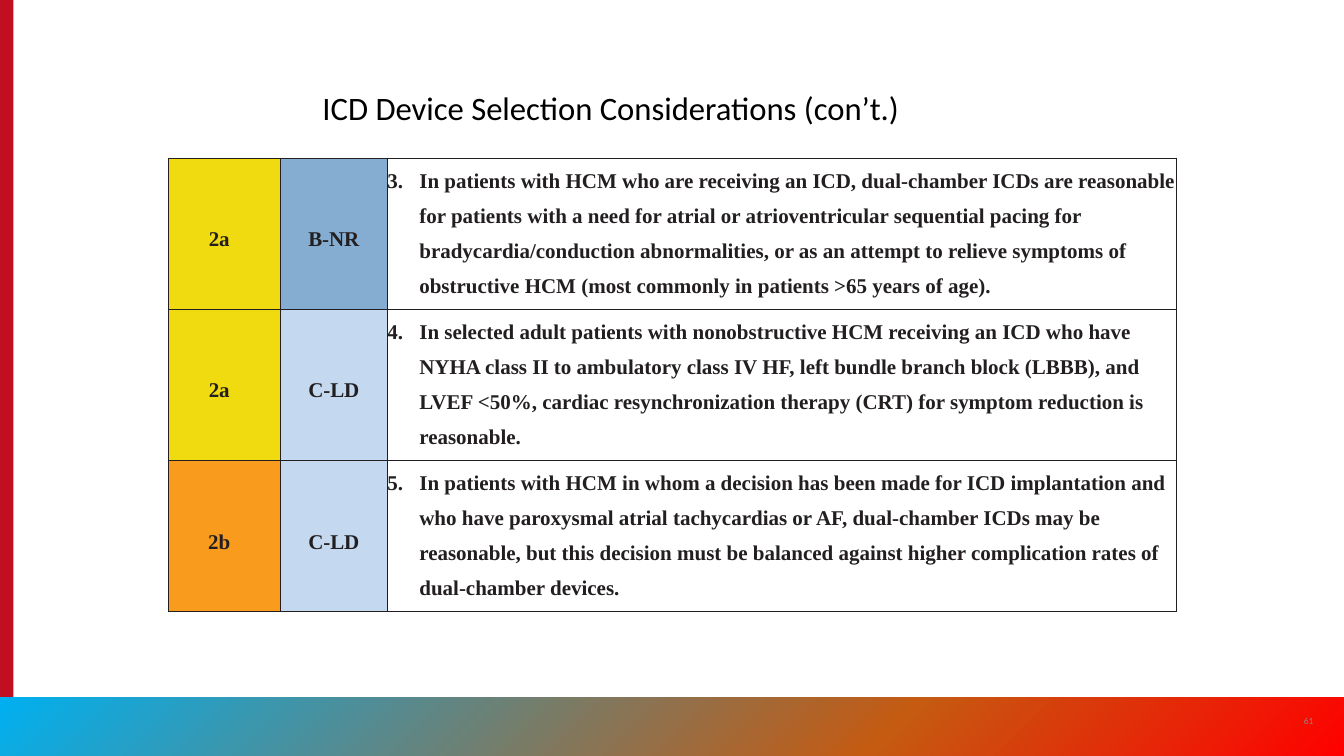
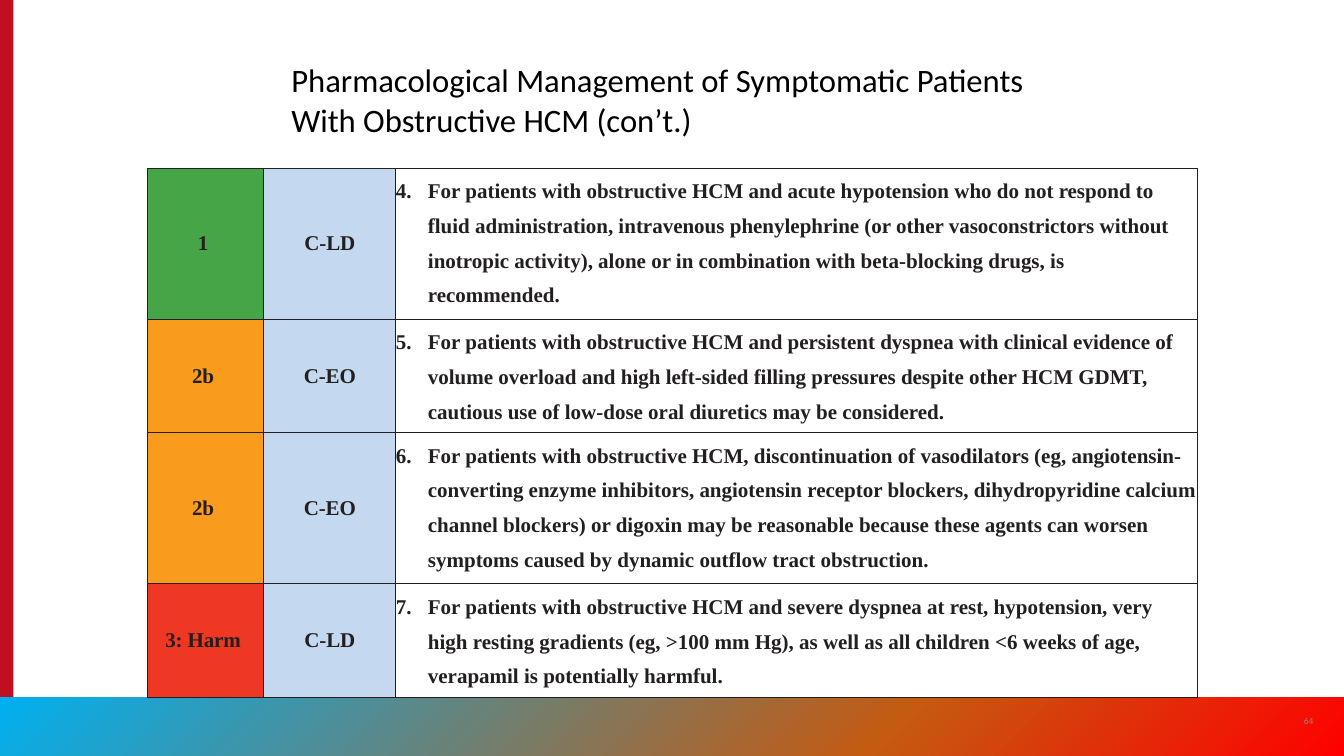
from dataclasses import dataclass

from lxml import etree
from pptx import Presentation, util as u
from pptx.dml import color
from pptx.enum import shapes, text
from pptx.oxml import ns

COLORS = {
    "bar": "C10E21",
    "band_start": "00B0F0",
    "band_middle": "C55A11",
    "band_end": "FF0000",
    "number": "8A8B8A",
    "title": "000000",
    "ink": "231F20",
    "1": "45A547",
    "2a": "F0DA10",
    "2b": "F99B1C",
    "3: Harm": "EF3824",
    "B-NR": "85ADD1",
    "C-LD": "C4D9F0",
    "C-EO": "C4D9F0",
}
BAND_STOPS = [(0, "band_start"), (66, "band_middle"), (100, "band_end")]
SLIDE_WIDTH, SLIDE_HEIGHT = u.Cm(40.64), u.Cm(22.86)
BAND_TOP = u.Cm(21.08)
HANGING = u.Cm(0.97)
TITLE_FONT, TABLE_FONT = "Calibri", "Times New Roman"


@dataclass
class Recommendation:
    strength: str
    evidence: str
    wording: str
    height: float


@dataclass
class Page:
    number: str
    title: str
    title_box: tuple[float, float, float, float]
    table_corner: tuple[float, float]
    columns: tuple[float, float, float]
    label_spacing: float
    strength_margins: tuple[float, float]
    first_item: int
    rows: list[Recommendation]


FOUR_LINES, THREE_LINES = 4.57, 3.43

PAGES = [
    Page(
        "61", "ICD Device Selection Considerations (con’t.)",
        (9.5, 2.54, 21.64, 1.45), (5.08, 4.78), (3.4, 3.23, 23.85),
        1.5, (0.18, 0.48), 3,
        [
            Recommendation(
                "2a", "B-NR",
                "In patients with HCM who are receiving an ICD, dual-chamber ICDs are reasonable "
                "for patients with a need for atrial or atrioventricular sequential pacing for "
                "bradycardia/conduction abnormalities, or as an attempt to relieve symptoms of "
                "obstructive HCM (most commonly in patients >65 years of age).", FOUR_LINES),
            Recommendation(
                "2a", "C-LD",
                "In selected adult patients with nonobstructive HCM receiving an ICD who have "
                "NYHA class II to ambulatory class IV HF, left bundle branch block (LBBB), and "
                "LVEF <50%, cardiac resynchronization therapy (CRT) for symptom reduction is "
                "reasonable.", FOUR_LINES),
            Recommendation(
                "2b", "C-LD",
                "In patients with HCM in whom a decision has been made for ICD implantation and "
                "who have paroxysmal atrial tachycardias or AF, dual-chamber ICDs may be "
                "reasonable, but this decision must be balanced against higher complication "
                "rates of dual-chamber devices.", FOUR_LINES),
        ],
    ),
    Page(
        "64", "Pharmacological Management of Symptomatic Patients With Obstructive HCM (con’t.)",
        (8.56, 1.7, 23.5, 2.64), (4.45, 5.08), (3.53, 3.99, 24.23),
        1.0, (0, 0.15), 4,
        [
            Recommendation(
                "1", "C-LD",
                "For patients with obstructive HCM and acute hypotension who do not respond to "
                "fluid administration, intravenous phenylephrine (or other vasoconstrictors "
                "without inotropic activity), alone or in combination with beta-blocking drugs, "
                "is recommended.", FOUR_LINES),
            Recommendation(
                "2b", "C-EO",
                "For patients with obstructive HCM and persistent dyspnea with clinical evidence "
                "of volume overload and high left-sided filling pressures despite other HCM GDMT, "
                "cautious use of low-dose oral diuretics may be considered.", THREE_LINES),
            Recommendation(
                "2b", "C-EO",
                "For patients with obstructive HCM, discontinuation of vasodilators (eg, "
                "angiotensin-converting enzyme inhibitors, angiotensin receptor blockers, "
                "dihydropyridine calcium channel blockers) or digoxin may be reasonable because "
                "these agents can worsen symptoms caused by dynamic outflow tract obstruction.",
                FOUR_LINES),
            Recommendation(
                "3: Harm", "C-LD",
                "For patients with obstructive HCM and severe dyspnea at rest, hypotension, very "
                "high resting gradients (eg, >100 mm Hg), as well as all children <6 weeks of "
                "age, verapamil is potentially harmful.", THREE_LINES),
        ],
    ),
]


def rgb(name: str) -> color.RGBColor:
    return color.RGBColor.from_string(COLORS[name])


def add_element(parent, tag: str, **attributes):
    element = etree.SubElement(parent, ns.qn(tag))
    for key, value in attributes.items():
        element.set(key, str(value))
    return element


def add_run(paragraph, words: str, font: str, size: float, ink: str, bold: bool = False):
    run = paragraph.add_run()
    run.text = words
    run.font.name = font
    run.font.size = u.Pt(size)
    run.font.bold = bold
    run.font.color.rgb = rgb(ink)
    return run


def add_block(slide, left: int, top: int, width: int, height: int):
    shape = slide.shapes.add_shape(shapes.MSO_SHAPE.RECTANGLE, left, top, width, height)
    shape.shadow.inherit = False
    shape.line.fill.background()
    return shape


def draw_frame(slide) -> None:
    bar = add_block(slide, 0, 0, u.Cm(0.41), SLIDE_HEIGHT)
    bar.fill.solid()
    bar.fill.fore_color.rgb = rgb("bar")
    band = add_block(slide, 0, BAND_TOP, SLIDE_WIDTH, SLIDE_HEIGHT - BAND_TOP)
    band.fill.gradient()
    gradient = band._element.spPr.find(ns.qn("a:gradFill"))
    for child in list(gradient):
        gradient.remove(child)
    stops = add_element(gradient, "a:gsLst")
    for position, name in BAND_STOPS:
        stop = add_element(stops, "a:gs", pos=position * 1000)
        add_element(stop, "a:srgbClr", val=COLORS[name])
    add_element(gradient, "a:lin", ang=45 * 60000, scaled=0)


def draw_text(slide, box: tuple[float, float, float, float], words: str, size: float, ink: str):
    frame = slide.shapes.add_textbox(*map(u.Cm, box)).text_frame
    frame.word_wrap = True
    add_run(frame.paragraphs[0], words, TITLE_FONT, size, ink)
    return frame


def style_cell(cell, fill: str | None = None) -> None:
    cell.margin_left = cell.margin_right = cell.margin_top = cell.margin_bottom = 0
    properties = cell._tc.get_or_add_tcPr()
    for side in ("a:lnL", "a:lnR", "a:lnT", "a:lnB"):
        line = add_element(properties, side, w=u.Pt(1))
        add_element(add_element(line, "a:solidFill"), "a:srgbClr", val=COLORS["ink"])
    if fill:
        cell.fill.solid()
        cell.fill.fore_color.rgb = rgb(fill)
    else:
        cell.fill.background()


def fill_label(cell, label: str, spacing: float, margins: tuple[float, float]) -> None:
    style_cell(cell, label)
    cell.vertical_anchor = text.MSO_ANCHOR.MIDDLE
    paragraph = cell.text_frame.paragraphs[0]
    paragraph.alignment = text.PP_ALIGN.CENTER
    paragraph.line_spacing = spacing
    properties = paragraph._p.get_or_add_pPr()
    for side, margin in zip(("marL", "marR"), margins):
        properties.set(side, str(u.Cm(margin)))
    run = add_run(paragraph, label, TABLE_FONT, 18, "ink", True)
    run._r.get_or_add_rPr().set("spc", "-10")


def fill_wording(cell, words: str, item: int) -> None:
    style_cell(cell)
    paragraph = cell.text_frame.paragraphs[0]
    paragraph.line_spacing = 1.5
    properties = paragraph._p.get_or_add_pPr()
    properties.set("marL", str(HANGING))
    properties.set("indent", str(-HANGING))
    add_element(add_element(properties, "a:buClr"), "a:srgbClr", val=COLORS["ink"])
    add_element(properties, "a:buAutoNum", type="arabicPeriod", startAt=item)
    add_run(paragraph, words, TABLE_FONT, 18, "ink", True)


def draw_table(slide, page: Page) -> None:
    left, top = map(u.Cm, page.table_corner)
    width = u.Cm(sum(page.columns))
    height = u.Cm(sum(row.height for row in page.rows))
    table = slide.shapes.add_table(
        len(page.rows), len(page.columns), left, top, width, height).table
    table.first_row = table.horz_banding = False
    for column, column_width in zip(table.columns, page.columns):
        column.width = u.Cm(column_width)
    for index, row in enumerate(page.rows):
        table.rows[index].height = u.Cm(row.height)
        strength, evidence, wording = table.rows[index].cells
        fill_label(strength, row.strength, page.label_spacing, page.strength_margins)
        fill_label(evidence, row.evidence, page.label_spacing, (0, 0))
        fill_wording(wording, row.wording, page.first_item + index)


def draw_page(presentation, page: Page) -> None:
    slide = presentation.slides.add_slide(presentation.slide_layouts[6])
    draw_frame(slide)
    number = draw_text(slide, (38.96, 21.18, 1.22, 1.22), page.number, 8, "number")
    number.vertical_anchor = text.MSO_ANCHOR.MIDDLE
    number.paragraphs[0].alignment = text.PP_ALIGN.CENTER
    title = draw_text(slide, page.title_box, page.title, 28, "title")
    title.auto_size = text.MSO_AUTO_SIZE.SHAPE_TO_FIT_TEXT
    draw_table(slide, page)


def main() -> None:
    presentation = Presentation()
    presentation.slide_width, presentation.slide_height = SLIDE_WIDTH, SLIDE_HEIGHT
    for page in PAGES:
        draw_page(presentation, page)
    presentation.save("out.pptx")


if __name__ == "__main__":
    main()
